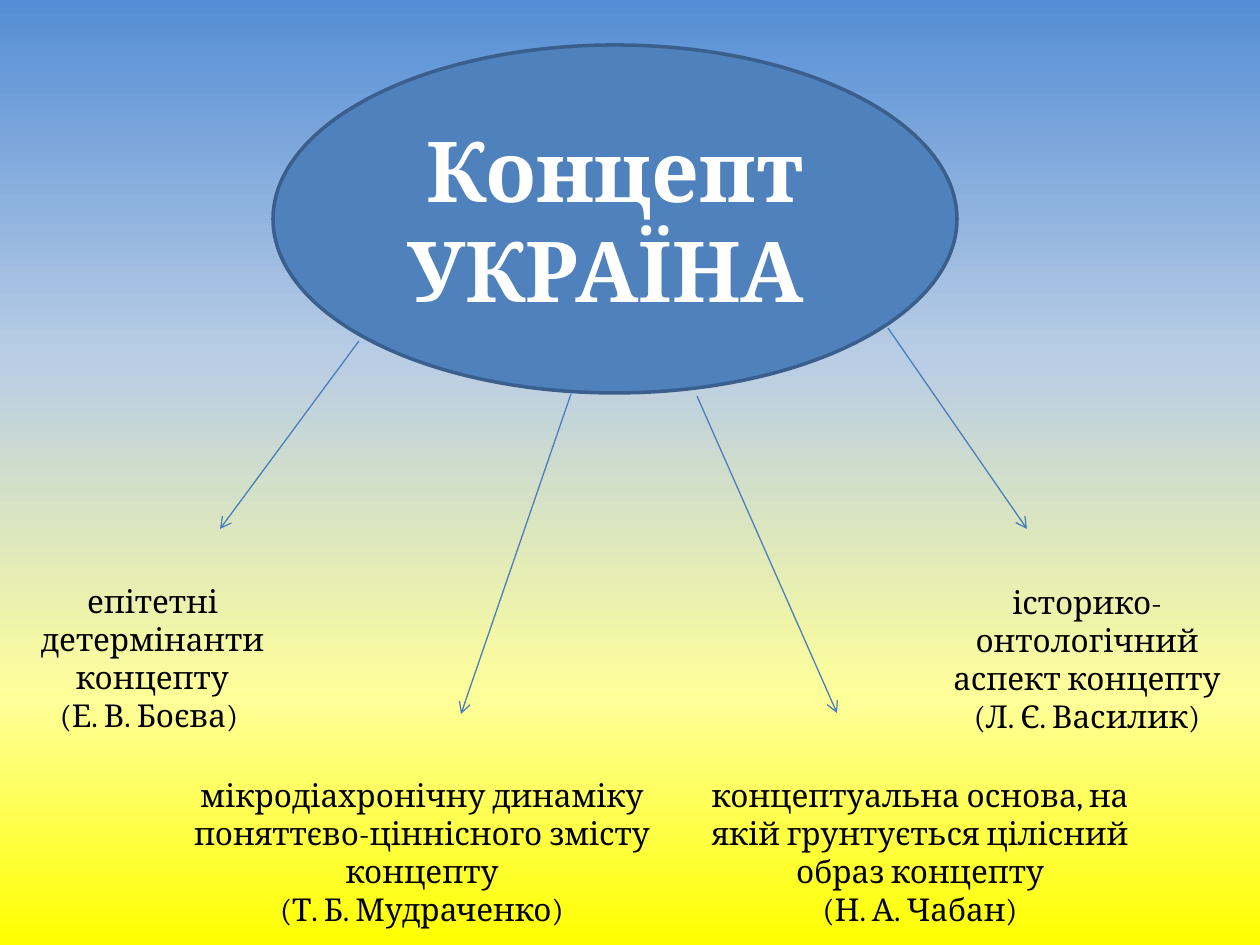
import pptx
import pptx.util
from lxml import etree
from pptx.dml.color import RGBColor
from pptx.enum.shapes import MSO_CONNECTOR, MSO_SHAPE
from pptx.enum.text import MSO_ANCHOR, MSO_AUTO_SIZE, PP_ALIGN
from pptx.oxml.ns import qn

PX = 914400 / 126
FONT = "Cambria"
HEX = {"oval": "4F81BD", "rim": "3A5F8C", "arrow": "4B7EBC",
       "white": "FFFFFF", "black": "000000"}
SKY = [(0, "558ED5"), (38, "B9CDE5"), (74, "FFFF99"), (100, "FFFF00")]

HEAD = "Концепт УКРАЇНА "
OVAL = (273, 45, 684, 348)
TALL = 165
# text, author, box (left, top, width), arrow (from x, y, to x, y)
PARTS = [
    ("епітетні детермінанти концепту", "(Е. В. Боєва) ",
     (15, 576, 275), (359, 341, 220, 529)),
    ("мікродіахронічну динаміку поняттєво-ціннісного змісту концепту",
     "(Т. Б. Мудраченко)",
     (129, 770, 586), (571, 394, 461, 714)),
    ("концептуальна основа, на якій грунтується цілісний образ концепту",
     "(Н. А. Чабан)",
     (697, 770, 446), (697, 396, 837, 713)),
    ("історико-онтологічний аспект концепту", "(Л. Є. Василик)",
     (920, 577, 334), (888, 328, 1027, 529)),
]


def emu(*nums):
    return [round(n * PX) for n in nums]


def color(name):
    return RGBColor.from_string(HEX[name])


def write(para, text, size, ink, bold=False):
    para.alignment = PP_ALIGN.CENTER
    run = para.add_run()
    run.text = text
    run.font.name = FONT
    run.font.size = pptx.util.Pt(size)
    run.font.bold = bold
    run.font.color.rgb = color(ink)


def paint(slide):
    """Fill the background with the vertical gradient."""
    slide.background.fill.gradient()
    grad = next(slide.element.iter(qn("a:gradFill")))
    stops = grad.find(qn("a:gsLst"))
    for old in list(stops):
        stops.remove(old)
    for pos, tone in SKY:
        stop = etree.SubElement(stops, qn("a:gs"), pos=str(pos * 1000))
        etree.SubElement(stop, qn("a:srgbClr"), val=tone)
    grad.find(qn("a:lin")).set("ang", str(90 * 60000))


def add_oval(slide):
    oval = slide.shapes.add_shape(MSO_SHAPE.OVAL, *emu(*OVAL))
    oval.shadow.inherit = False
    oval.fill.solid()
    oval.fill.fore_color.rgb = color("oval")
    oval.line.color.rgb = color("rim")
    oval.line.width = pptx.util.Pt(2)
    frame = oval.text_frame
    frame.word_wrap = True
    frame.vertical_anchor = MSO_ANCHOR.MIDDLE
    write(frame.paragraphs[0], HEAD, 48, "white", True)


def add_arrow(slide, ends):
    arrow = slide.shapes.add_connector(MSO_CONNECTOR.STRAIGHT, *emu(*ends))
    arrow.line.color.rgb = color("arrow")
    arrow.line.width = pptx.util.Pt(0.75)
    props = arrow.element.spPr
    etree.SubElement(props.find(qn("a:ln")), qn("a:tailEnd"), type="arrow")
    etree.SubElement(props, qn("a:effectLst"))


def add_label(slide, text, author, box):
    frame = slide.shapes.add_textbox(*emu(*box, TALL)).text_frame
    frame.word_wrap = True
    frame.auto_size = MSO_AUTO_SIZE.SHAPE_TO_FIT_TEXT
    write(frame.paragraphs[0], text, 18, "black")
    write(frame.add_paragraph(), author, 18, "black")


def main():
    deck = pptx.Presentation()
    deck.slide_width, deck.slide_height = emu(1260, 945)
    slide = deck.slides.add_slide(deck.slide_layouts[6])
    paint(slide)
    add_oval(slide)
    for text, author, box, ends in PARTS:
        add_arrow(slide, ends)
        add_label(slide, text, author, box)
    deck.save("out.pptx")


if __name__ == "__main__":
    main()
